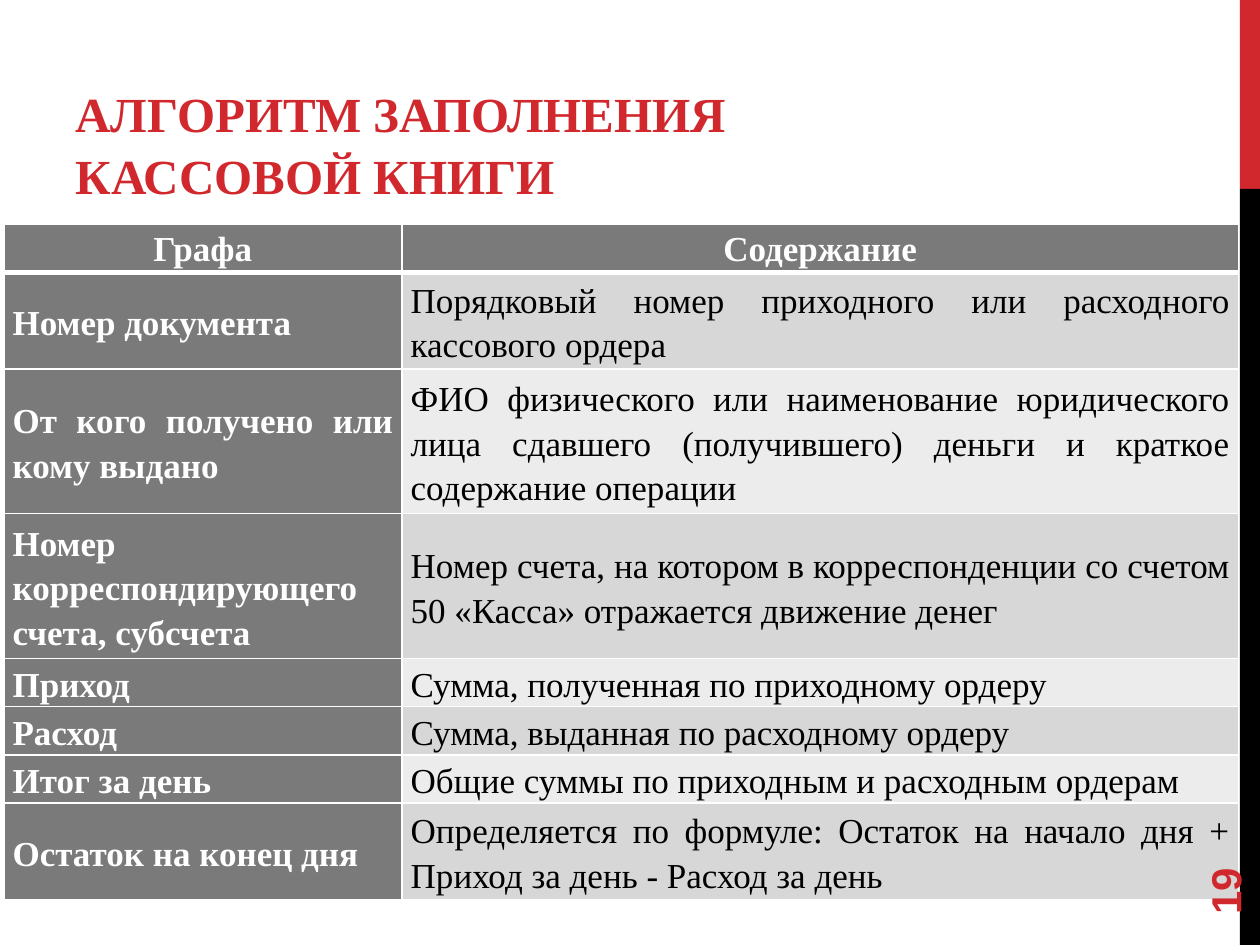
from lxml import etree
from pptx import Presentation
from pptx.dml.color import RGBColor
from pptx.enum.shapes import MSO_SHAPE
from pptx.enum.text import MSO_ANCHOR, MSO_AUTO_SIZE, PP_ALIGN
from pptx.oxml.ns import qn
from pptx.util import Inches, Pt

RECTANGLE = MSO_SHAPE.RECTANGLE
MIDDLE, BOTTOM, TOP = MSO_ANCHOR.MIDDLE, MSO_ANCHOR.BOTTOM, MSO_ANCHOR.TOP
LEFT, CENTER, JUSTIFY = PP_ALIGN.LEFT, PP_ALIGN.CENTER, PP_ALIGN.JUSTIFY

WIDTH, HEIGHT = 10, 7.5
SERIF, SANS = "Times New Roman", "Arial"
RED, BLACK, WHITE = "D1282E", "000000", "FFFFFF"
GRAY, BANDS = "7A7A7A", ("D7D7D7", "ECECEC")

LINE_ROW = 0.383  # height of a table row per line of text
COLUMN_WIDTHS = (3.16, 6.64)
HEADER = ("Графа", "Содержание")
# Lines of text, label, content
ENTRIES = (
    (2, "Номер документа",
     "Порядковый номер приходного или расходного кассового ордера"),
    (3, "От кого получено или кому выдано",
     "ФИО физического или наименование юридического лица сдавшего "
     "(получившего) деньги и краткое содержание операции"),
    (3, "Номер корреспондирующего счета, субсчета",
     "Номер счета, на котором в корреспонденции со счетом 50 «Касса» "
     "отражается движение денег"),
    (1, "Приход", "Сумма, полученная по приходному ордеру"),
    (1, "Расход", "Сумма, выданная по расходному ордеру"),
    (1, "Итог за день", "Общие суммы по приходным и расходным ордерам"),
    (2, "Остаток на конец дня",
     "Определяется по формуле: Остаток на начало дня + "
     "Приход за день - Расход за день"),
)


def color(value):
    return RGBColor.from_string(value)


def add_text(paragraph, text, size, font, value, bold=True, align=LEFT, spacing=1.0):
    paragraph.alignment = align
    paragraph.line_spacing = spacing
    run = paragraph.add_run()
    run.text = text
    run.font.size = Pt(size)
    run.font.name = font
    run.font.bold = bold
    run.font.color.rgb = color(value)


def add_side_bar(slide, left, top, width, height):
    """Stripe at the edge: one fifth red, the rest black."""
    red_height = height / 5
    for y, part, value in ((top, red_height, RED),
                           (top + red_height, height - red_height, BLACK)):
        shape = slide.shapes.add_shape(
            RECTANGLE, Inches(left), Inches(y), Inches(width), Inches(part))
        shape.shadow.inherit = False
        shape.fill.solid()
        shape.fill.fore_color.rgb = color(value)
        shape.line.fill.background()


def add_title(slide, left, top, width, height):
    title = slide.shapes.title
    title.left, title.top = Inches(left), Inches(top)
    title.width, title.height = Inches(width), Inches(height)
    frame = title.text_frame
    frame.word_wrap = True
    frame.auto_size = MSO_AUTO_SIZE.NONE
    frame.vertical_anchor = BOTTOM
    add_text(frame.paragraphs[0], "АЛГОРИТМ ЗАПОЛНЕНИЯ КАССОВОЙ КНИГИ",
             28, SERIF, RED, spacing=1.05)


def set_borders(cell, top, bottom):
    """White lines around a cell; top and bottom widths in points."""
    properties = cell._tc.get_or_add_tcPr()
    for tag, points in (("a:lnL", 1), ("a:lnR", 1), ("a:lnT", top), ("a:lnB", bottom)):
        line = etree.SubElement(properties, qn(tag), w=str(Pt(points)))
        fill = etree.SubElement(line, qn("a:solidFill"))
        etree.SubElement(fill, qn("a:srgbClr"), val=WHITE)


def fill_cell(cell, text, row, column):
    is_header = row == 0
    is_dark = is_header or column == 0
    set_borders(cell, 3 if row == 1 else 1, 3 if is_header else 1)
    cell.fill.solid()
    cell.fill.fore_color.rgb = color(GRAY if is_dark else BANDS[(row - 1) % 2])
    cell.margin_left = cell.margin_right = Inches(0.07)
    cell.margin_top = cell.margin_bottom = 0
    cell.vertical_anchor = TOP if is_header else MIDDLE
    add_text(cell.text_frame.paragraphs[0], text, 20, SERIF,
             WHITE if is_dark else BLACK, is_dark,
             CENTER if is_header else JUSTIFY, 1.15)


def add_ledger_table(slide, left, top):
    rows = ((1, *HEADER), *ENTRIES)
    height = LINE_ROW * sum(row[0] for row in rows)
    table = slide.shapes.add_table(
        len(rows), len(COLUMN_WIDTHS), Inches(left), Inches(top),
        Inches(sum(COLUMN_WIDTHS)), Inches(height)).table
    for column, width in zip(table.columns, COLUMN_WIDTHS):
        column.width = Inches(width)
    for row, (lines, *texts) in enumerate(rows):
        table.rows[row].height = Inches(lines * LINE_ROW)
        for column, text in enumerate(texts):
            fill_cell(table.cell(row, column), text, row, column)


def add_page_number(slide, left, top, width, height):
    box = slide.shapes.add_textbox(
        Inches(left), Inches(top), Inches(width), Inches(height))
    box.rotation = 270
    frame = box.text_frame
    frame.word_wrap = True
    frame.vertical_anchor = MIDDLE
    add_text(frame.paragraphs[0], "19", 24, SANS, RED)


def main():
    presentation = Presentation()
    presentation.slide_width = Inches(WIDTH)
    presentation.slide_height = Inches(HEIGHT)
    slide = presentation.slides.add_slide(presentation.slide_layouts[5])
    add_side_bar(slide, WIDTH - 0.16, 0, 0.16, HEIGHT)
    add_title(slide, 0.5, 0.17, 6.33, 1.5)
    add_ledger_table(slide, 0.03, 1.78)
    add_page_number(slide, 9, 6.44, 1.44, 0.4)
    presentation.save("out.pptx")


if __name__ == "__main__":
    main()
